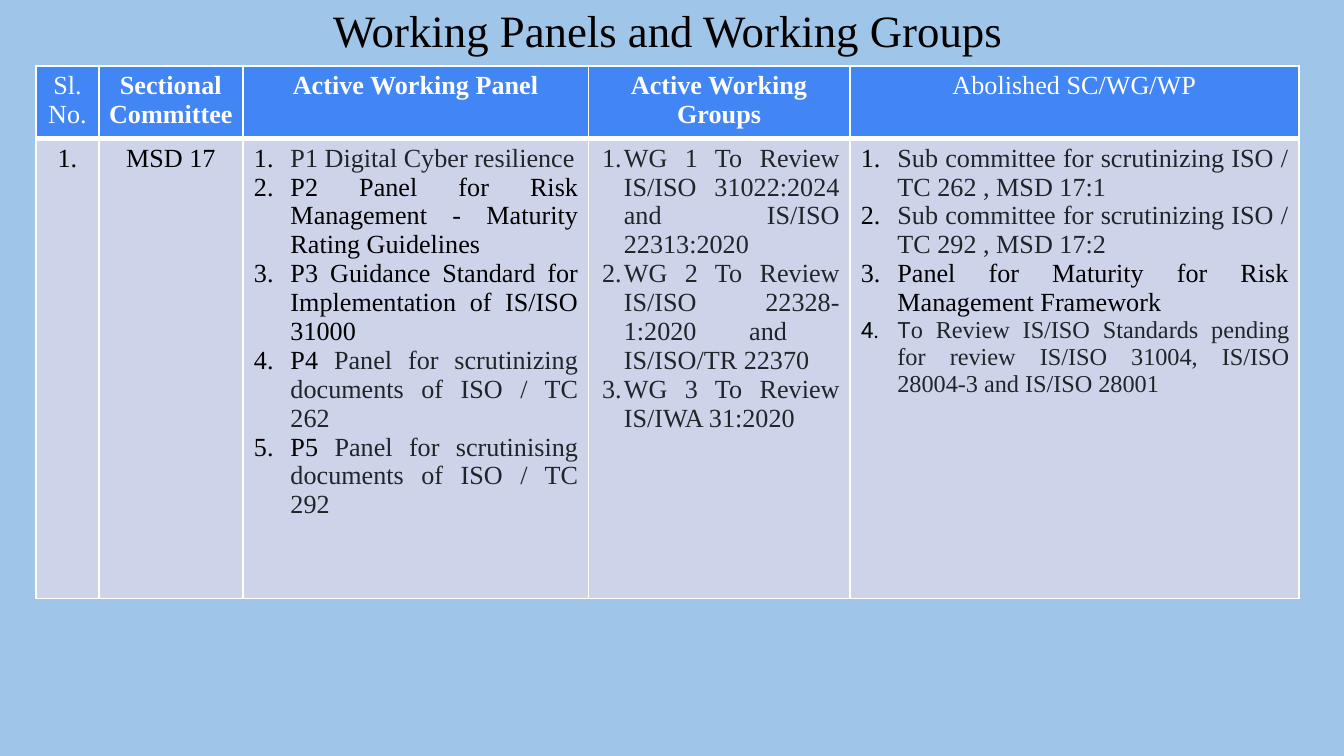
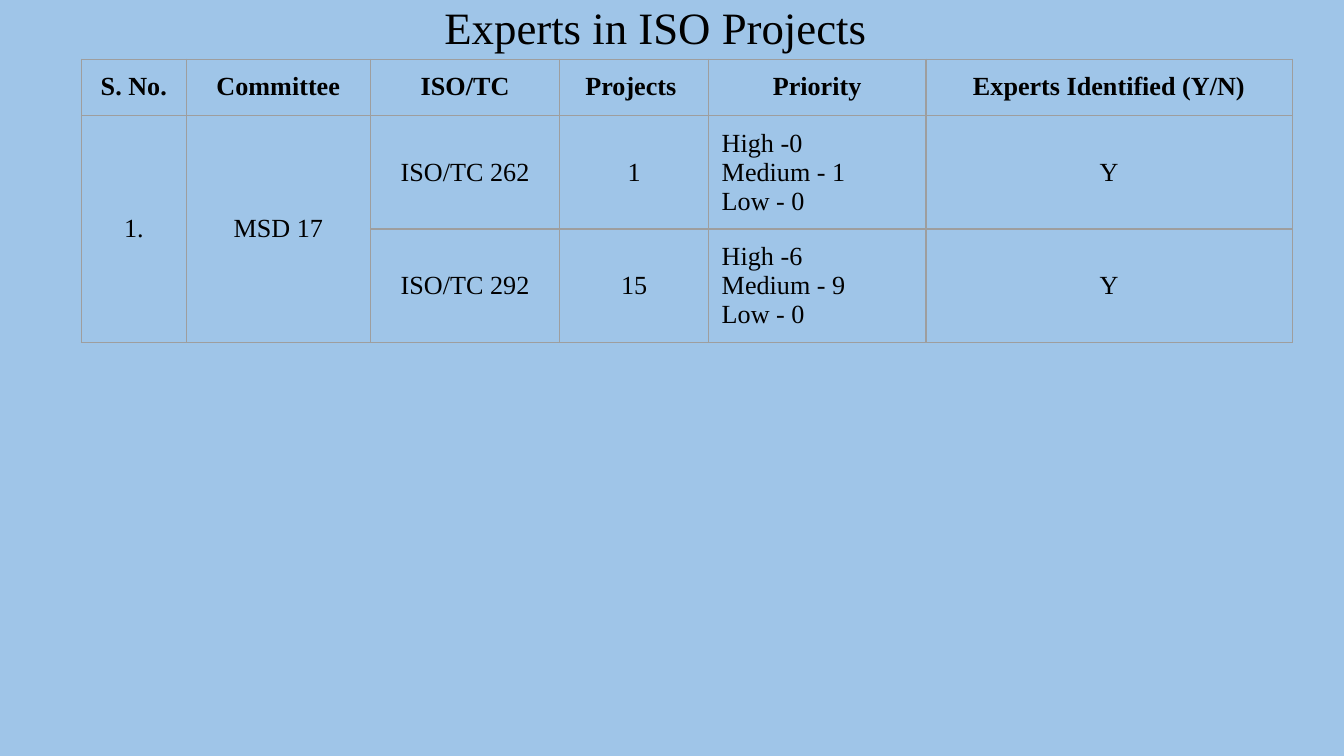
"""Build two slides on committee working panels and experts in ISO projects."""
from lxml import etree
from pptx import Presentation
from pptx import util as u
from pptx.dml.color import RGBColor
from pptx.enum import text
from pptx.oxml.ns import qn

SKY = RGBColor(0x9F, 0xC5, 0xE8)
BLUE = RGBColor(0x42, 0x85, 0xF4)
LAVENDER = RGBColor(0xCD, 0xD4, 0xEA)
GREY = RGBColor(0x9E, 0x9E, 0x9E)
INK = RGBColor(0x21, 0x25, 0x29)
BLACK = RGBColor(0, 0, 0)
WHITE = RGBColor(0xFF, 0xFF, 0xFF)
FONT = "Times New Roman"
CENTER, LEFT, JUSTIFY = text.PP_ALIGN.CENTER, text.PP_ALIGN.LEFT, text.PP_ALIGN.JUSTIFY
MIDDLE = text.MSO_ANCHOR.MIDDLE

PANEL_TITLE = "Working Panels and Working Groups"
PANEL_COLUMNS = [1.19, 2.72, 6.53, 4.94, 8.49]
PANEL_ROWS = [1.37, 8.69]
PANEL_HEADERS = [
    ("Sl. No.", False),
    ("Sectional Committee", True),
    ("Active Working Panel", True),
    ("Active Working Groups", True),
    ("Abolished SC/WG/WP", False),
]
COMMITTEE = ["1.", "MSD 17"]
DARK = {"color": INK}
PANELS = [
    [("P1 Digital Cyber resilience", DARK)],
    "P2 Panel for Risk Management - Maturity Rating Guidelines ",
    "P3 Guidance Standard for Implementation of IS/ISO 31000",
    ["P4 ", ("Panel for scrutinizing documents of ISO / TC 262", DARK)],
    ["P5 ", ("Panel for scrutinising documents of ISO / TC 292", DARK)],
]
GROUPS = [
    "WG 1 To Review IS/ISO 31022:2024 and IS/ISO 22313:2020",
    "WG 2 To Review IS/ISO 22328-1:2020 and  IS/ISO/TR 22370",
    "WG 3 To Review IS/IWA 31:2020",
]
ABOLISHED = [
    "Sub committee for scrutinizing ISO / TC 262 , MSD 17:1",
    "Sub committee for scrutinizing ISO / TC 292 , MSD 17:2",
    [("Panel for Maturity for Risk Management Framework", {"color": BLACK})],
    [
        ("T", {"size": 12, "font": "Roboto"}),
        ("o Review IS/ISO Standards pending for review IS/ISO 31004, "
         "IS/ISO 28004-3 and IS/ISO 28001", {"size": 13}),
    ],
]
WIDE_INDENT, NARROW_INDENT = (0.71, -0.69), (0.48, -0.41)
PANEL_LISTS = [
    (PANELS, BLACK, BLACK, WIDE_INDENT),
    (GROUPS, INK, INK, NARROW_INDENT),
    (ABOLISHED, INK, BLACK, WIDE_INDENT),
]

EXPERT_TITLE = "Experts in ISO Projects "
EXPERT_COLUMNS = [1.98, 3.48, 3.58, 2.81, 4.11, 6.92]
EXPERT_ROWS = [1.07, 2.14, 2.14]
EXPERT_HEADERS = ["S. No.", "Committee", "ISO/TC", "Projects ", "Priority",
                  "Experts Identified (Y/N)"]
PROJECTS = [
    ["ISO/TC 262", "1", ["High -0", "Medium - 1", "Low - 0"], "Y"],
    ["ISO/TC 292", "15", ["High -6", "Medium - 9", "Low - 0"], "Y"],
]


def write_text(frame, paragraphs, size=14, color=BLACK, bold=False, font=FONT,
               align=CENTER, spacing=None, number_color=None, indent=None):
    """Fill a text frame; a paragraph is a string or a list of runs."""
    for index, content in enumerate(paragraphs):
        paragraph = frame.add_paragraph() if index else frame.paragraphs[0]
        paragraph.alignment = align
        if spacing:
            paragraph.line_spacing = spacing
        if indent:
            number_paragraph(paragraph, number_color, indent)
        for part in [content] if isinstance(content, str) else content:
            wording, changes = (part, {}) if isinstance(part, str) else part
            run = paragraph.add_run()
            run.text = wording
            run.font.size = u.Pt(changes.get("size", size))
            run.font.name = changes.get("font", font)
            run.font.bold = bold
            run.font.color.rgb = changes.get("color", color)


def number_paragraph(paragraph, color, indent):
    """Give a paragraph a coloured automatic number and a hanging indent."""
    properties = paragraph._p.get_or_add_pPr()
    for name, length in zip(("marL", "indent"), indent):
        properties.set(name, str(u.Cm(length)))
    holder = etree.SubElement(properties, qn("a:buClr"))
    etree.SubElement(holder, qn("a:srgbClr"), val=str(color))
    etree.SubElement(properties, qn("a:buAutoNum"), type="arabicPeriod")


def set_margins(target, horizontal, vertical):
    """Set equal margins on opposite sides of a cell or text frame."""
    target.margin_left = target.margin_right = u.Cm(horizontal)
    target.margin_top = target.margin_bottom = u.Cm(vertical)


def add_border(cell, color, width, bottom=None):
    """Draw the four borders of a cell."""
    properties = cell._tc.get_or_add_tcPr()
    for side in "LRTB":
        points = bottom if bottom and side == "B" else width
        line = etree.SubElement(properties, qn(f"a:ln{side}"), w=str(u.Pt(points)))
        fill = etree.SubElement(line, qn("a:solidFill"))
        etree.SubElement(fill, qn("a:srgbClr"), val=str(color))


def add_titled_slide(presentation, title, left, width, height):
    """Add a slide with the shared background and title style."""
    slide = presentation.slides.add_slide(presentation.slide_layouts[5])
    slide.background.fill.solid()
    slide.background.fill.fore_color.rgb = SKY
    shape = slide.shapes.title
    shape.left, shape.top = u.Cm(left), u.Cm(0)
    shape.width, shape.height = u.Cm(width), u.Cm(height)
    frame = shape.text_frame
    frame.vertical_anchor = MIDDLE
    set_margins(frame, 0.18, 0.1)
    write_text(frame, [title], size=24, spacing=0.9)
    return slide


def add_grid(slide, left, top, columns, rows):
    """Add a table with the given column widths and row heights."""
    table = slide.shapes.add_table(
        len(rows), len(columns), u.Cm(left), u.Cm(top),
        u.Cm(sum(columns)), u.Cm(sum(rows))).table
    table.horz_banding = False
    for column, width in zip(table.columns, columns):
        column.width = u.Cm(width)
    for row, height in zip(table.rows, rows):
        row.height = u.Cm(height)
    return table


def build_panels(presentation):
    """Add the slide on working panels and groups."""
    slide = add_titled_slide(presentation, PANEL_TITLE, 0.68, 23.87, 1.24)
    table = add_grid(slide, 0.68, 1.25, PANEL_COLUMNS, PANEL_ROWS)
    for row, (fill, bottom) in enumerate([(BLUE, 3), (LAVENDER, 1)]):
        for cell in table.rows[row].cells:
            set_margins(cell, 0.19, 0.1)
            add_border(cell, WHITE, 1, bottom)
            cell.fill.solid()
            cell.fill.fore_color.rgb = fill
    for column, (header, bold) in enumerate(PANEL_HEADERS):
        write_text(table.cell(0, column).text_frame, [header], color=WHITE, bold=bold)
    for column, wording in enumerate(COMMITTEE):
        write_text(table.cell(1, column).text_frame, [wording])
    for column, (items, color, number_color, indent) in enumerate(PANEL_LISTS, 2):
        write_text(table.cell(1, column).text_frame, items, color=color,
                   align=JUSTIFY, number_color=number_color, indent=indent)


def build_experts(presentation):
    """Add the slide on experts in ISO projects."""
    slide = add_titled_slide(presentation, EXPERT_TITLE, 1.54, 21.9, 1.12)
    table = add_grid(slide, 1.54, 1.12, EXPERT_COLUMNS, EXPERT_ROWS)
    for cell in table.iter_cells():
        set_margins(cell, 0.25, 0.25)
        add_border(cell, GREY, 0.75)
        cell.fill.background()
    for column, header in enumerate(EXPERT_HEADERS):
        write_text(table.cell(0, column).text_frame, [header], bold=True)
    for column, wording in enumerate(COMMITTEE):
        cell = table.cell(1, column)
        cell.merge(table.cell(2, column))
        cell.vertical_anchor = MIDDLE
        write_text(cell.text_frame, [wording])
    for row, project in enumerate(PROJECTS, 1):
        for column, content in enumerate(project, len(COMMITTEE)):
            cell = table.cell(row, column)
            if isinstance(content, list):
                write_text(cell.text_frame, content, align=LEFT)
            else:
                cell.vertical_anchor = MIDDLE
                write_text(cell.text_frame, [content])


def main():
    """Build and save the presentation."""
    presentation = Presentation()
    presentation.slide_width, presentation.slide_height = u.Cm(25.4), u.Cm(14.29)
    build_panels(presentation)
    build_experts(presentation)
    presentation.save("out.pptx")


if __name__ == "__main__":
    main()
